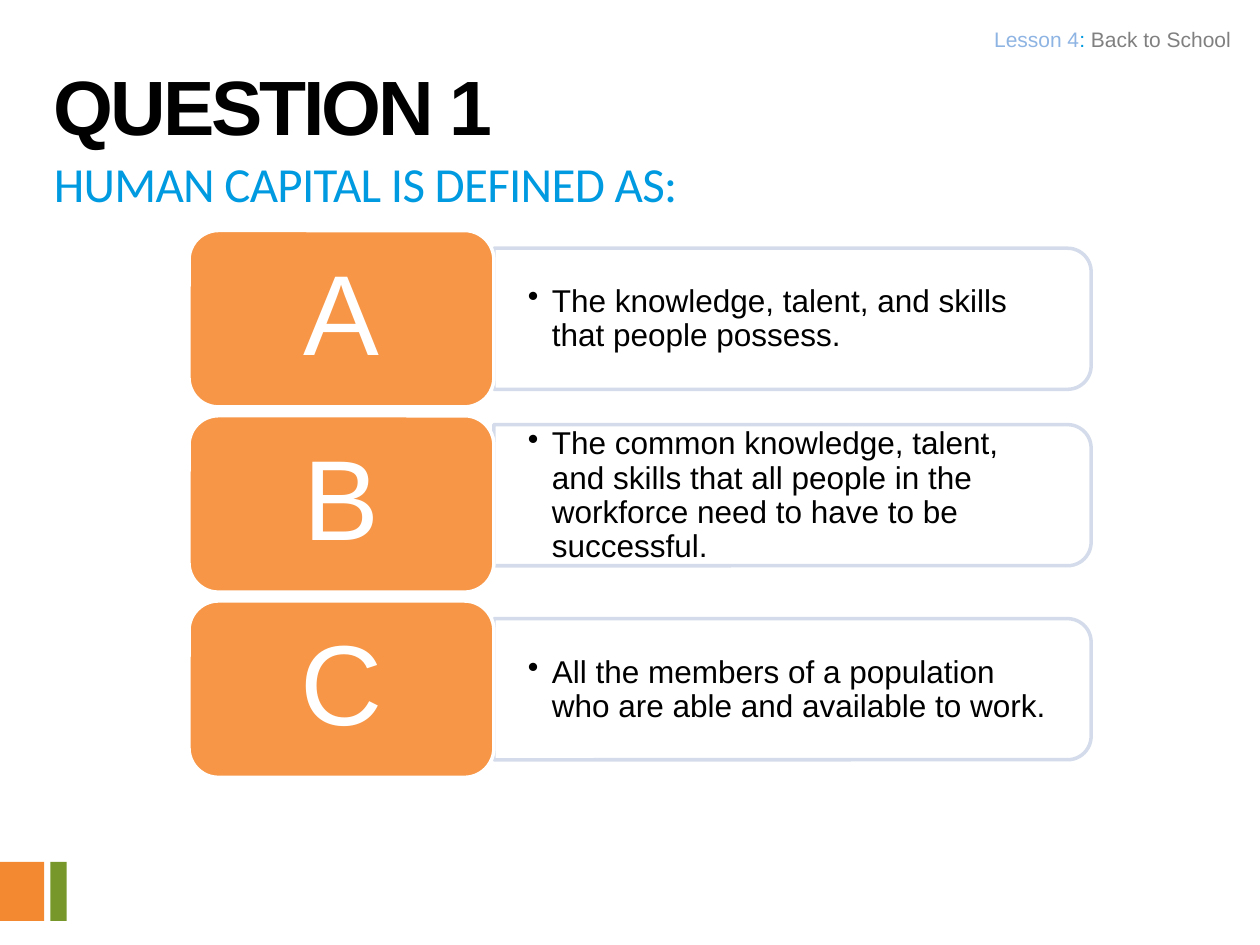
from dataclasses import dataclass

from lxml.etree import SubElement
from pptx import Presentation
from pptx.dml.color import RGBColor
from pptx.enum.shapes import MSO_SHAPE
from pptx.enum.text import MSO_ANCHOR, PP_ALIGN
from pptx.oxml.ns import qn
from pptx.util import Emu, Pt

EMU_PER_PX = 9144


@dataclass(frozen=True)
class Theme:
    """Colours, fonts and type sizes of the slide."""
    black: str = "000000"
    white: str = "FFFFFF"
    blue: str = "009AE1"
    pale_blue: str = "8EB4E3"
    grey: str = "808080"
    tile: str = "F79646"
    panel_line: str = "D0D8E8"
    orange_mark: str = "F38A31"
    green_mark: str = "77972B"
    body_font: str = "Arial"
    subtitle_font: str = "Calibri"
    title_size: int = 44
    subtitle_size: int = 28
    letter_size: int = 65
    answer_size: int = 18
    header_size: int = 12


THEME = Theme()

ANSWERS = [
    ("A", "The knowledge, talent, and skills that people possess.", 253),
    ("B", "The common knowledge, talent, and skills that all people in the "
          "workforce need to have to be successful.", 393),
    ("C", "All the members of a population who are able and available to work.", 547),
]
TILE_LEFT, TILE_TOP, TILE_WIDTH, TILE_HEIGHT, TILE_PITCH = 150, 183, 242, 140, 147
PANEL_WIDTH, PANEL_HEIGHT = 474, 112
ANSWER_WIDTH, ANSWER_HEIGHT = 469, 101


def px(length):
    """Turn whole px into EMU."""
    return Emu(length * EMU_PER_PX)


def style_run(run, size, color, font=THEME.body_font, bold=False, tracking=0):
    """Format a run; tracking is in hundredths of a point."""
    run.font.size = Pt(size)
    run.font.name = font
    run.font.bold = bold
    run.font.color.rgb = RGBColor.from_string(color)
    if tracking:
        run.font._element.set("spc", str(tracking))


def set_insets(frame, horizontal, vertical):
    """Set equal side insets and equal top and bottom insets."""
    frame.margin_left = frame.margin_right = px(horizontal)
    frame.margin_top = frame.margin_bottom = px(vertical)


def add_block(slide, preset, left, top, width, height, fill, line=None):
    """Add a flat preset shape with an optional 2 pt line."""
    block = slide.shapes.add_shape(preset, px(left), px(top), px(width), px(height))
    block.shadow.inherit = False
    block.fill.solid()
    block.fill.fore_color.rgb = RGBColor.from_string(fill)
    if line:
        block.line.color.rgb = RGBColor.from_string(line)
        block.line.width = Pt(2)
    else:
        block.line.fill.background()
    return block


def add_text(slide, left, top, width, height, text):
    """Add a wrapping text box and return its frame."""
    frame = slide.shapes.add_textbox(px(left), px(top), px(width), px(height)).text_frame
    frame.word_wrap = True
    frame.text = text
    return frame


def add_bullet(paragraph, indent):
    """Give a paragraph a round bullet with a hanging indent."""
    properties = paragraph._p.get_or_add_pPr()
    properties.set("marL", str(px(indent)))
    properties.set("indent", str(-px(indent)))
    SubElement(properties, qn("a:buChar"), char="•")


def add_panel(slide, middle):
    """Add the translucent panel, turned so its round corners face right."""
    center = TILE_LEFT + TILE_WIDTH + PANEL_WIDTH // 2
    panel = add_block(slide, MSO_SHAPE.ROUND_2_SAME_RECTANGLE,
                      center - PANEL_HEIGHT // 2, middle - PANEL_WIDTH // 2,
                      PANEL_HEIGHT, PANEL_WIDTH, THEME.white, THEME.panel_line)
    panel.rotation = 90
    for color in panel._element.spPr.iter(qn("a:srgbClr")):
        SubElement(color, qn("a:alpha"), val="90000")


def add_answer(slide, answer, middle):
    """Add the bulleted answer over its panel."""
    frame = add_text(slide, TILE_LEFT + TILE_WIDTH, middle - ANSWER_HEIGHT // 2,
                     ANSWER_WIDTH, ANSWER_HEIGHT, answer)
    frame.vertical_anchor = MSO_ANCHOR.MIDDLE
    set_insets(frame, 27, 14)
    paragraph = frame.paragraphs[0]
    add_bullet(paragraph, 19)
    paragraph.line_spacing = 0.9
    style_run(paragraph.runs[0], THEME.answer_size, THEME.black)


def add_letter_tile(slide, letter, top):
    """Add the rounded tile holding an answer's letter."""
    tile = add_block(slide, MSO_SHAPE.ROUNDED_RECTANGLE, TILE_LEFT, top,
                     TILE_WIDTH, TILE_HEIGHT, THEME.tile, THEME.white)
    frame = tile.text_frame
    frame.text = letter
    frame.vertical_anchor = MSO_ANCHOR.MIDDLE
    set_insets(frame, 27, 14)
    paragraph = frame.paragraphs[0]
    paragraph.alignment = PP_ALIGN.CENTER
    paragraph.line_spacing = 0.9
    style_run(paragraph.runs[0], THEME.letter_size, THEME.white)


def add_header(slide):
    """Add the lesson name at the top right."""
    frame = add_text(slide, 400, 17, 585, 32, "")
    set_insets(frame, 8, 4)
    paragraph = frame.paragraphs[0]
    paragraph.alignment = PP_ALIGN.RIGHT
    for words, color in (("Lesson 4", THEME.pale_blue), (": ", THEME.blue),
                         ("Back to School", THEME.grey)):
        run = paragraph.add_run()
        run.text = words
        style_run(run, THEME.header_size, color)


def add_headings(slide):
    """Add the question number and the question."""
    subtitle = add_text(slide, 33, 117, 950, 100, "HUMAN CAPITAL IS DEFINED AS:")
    style_run(subtitle.paragraphs[0].runs[0], THEME.subtitle_size, THEME.blue,
              THEME.subtitle_font, tracking=-40)
    title = add_text(slide, 33, 33, 866, 83, "QUESTION 1").paragraphs[0]
    title.line_spacing = Pt(59)
    style_run(title.runs[0], THEME.title_size, THEME.black, bold=True, tracking=-180)


def main():
    """Build and save the question slide."""
    deck = Presentation()
    deck.slide_width, deck.slide_height = px(1000), px(750)
    slide = deck.slides.add_slide(deck.slide_layouts[6])
    for left, width, color in ((0, 35, THEME.orange_mark), (40, 13, THEME.green_mark)):
        add_block(slide, MSO_SHAPE.RECTANGLE, left, 684, width, 47, color)
    add_headings(slide)
    for row, (letter, answer, middle) in enumerate(ANSWERS):
        add_panel(slide, middle)
        add_answer(slide, answer, middle)
        add_letter_tile(slide, letter, TILE_TOP + row * TILE_PITCH)
    add_header(slide)
    deck.save("out.pptx")


if __name__ == "__main__":
    main()
